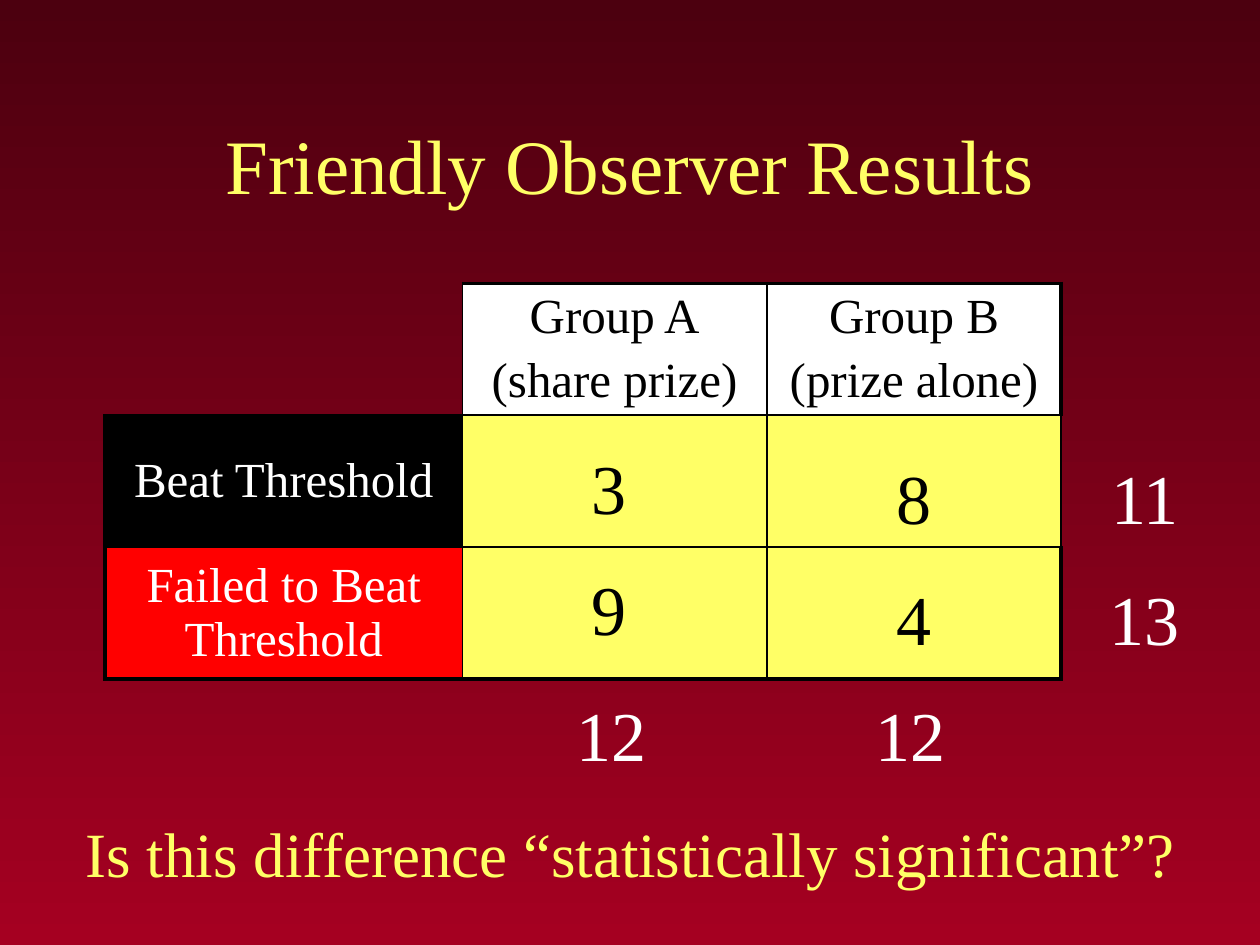
"""Build the slide with the friendly observer results."""
from dataclasses import dataclass

from lxml import etree
from pptx import Presentation, util as u
from pptx.dml.color import RGBColor
from pptx.enum import text as t
from pptx.oxml.ns import qn

FONT = "Times New Roman"
BLACK, WHITE, RED, YELLOW = "000000", "FFFFFF", "FF0000", "FFFF66"
DARK_RED, CRIMSON = "4C000F", "A50021"
NO_STYLE = "{2D5ABB26-0587-4C30-8999-92F81FD0307C}"
THIN, THICK = 1, 2.25


@dataclass
class Cell:
    text: str = ""
    color: str = BLACK
    fill: str | None = None
    anchor: t.MSO_ANCHOR = t.MSO_ANCHOR.MIDDLE


@dataclass
class Grid:
    left: float
    top: float
    columns: list[float]
    row_height: float
    rows: list[list[Cell]]
    size: float = 40


def rgb(value: str) -> RGBColor:
    """Turn a hex string into a colour."""
    return RGBColor.from_string(value)


def write(frame, text: str, size: float, color: str, align=None, space: float = 0) -> None:
    """Fill a text frame, one paragraph a line."""
    frame.text = text
    for paragraph in frame.paragraphs:
        paragraph.alignment = align
        paragraph.space_before = u.Pt(space)
        paragraph.font.name = FONT
        paragraph.font.size = u.Pt(size)
        paragraph.font.color.rgb = rgb(color)


def draw_grid(slide, grid: Grid):
    """Draw a table without style and return it."""
    table = slide.shapes.add_table(
        len(grid.rows), len(grid.columns), u.Cm(grid.left), u.Cm(grid.top),
        u.Cm(sum(grid.columns)), u.Cm(grid.row_height * len(grid.rows))).table
    table.first_row = table.horz_banding = False
    table._tbl.tblPr.find(qn("a:tableStyleId")).text = NO_STYLE
    for column, width in zip(table.columns, grid.columns):
        column.width = u.Cm(width)
    for row, cells in zip(table.rows, grid.rows):
        row.height = u.Cm(grid.row_height)
        for cell, content in zip(row.cells, cells):
            cell.vertical_anchor = content.anchor
            if content.fill:
                cell.fill.solid()
                cell.fill.fore_color.rgb = rgb(content.fill)
            else:
                cell.fill.background()
            if content.text:
                write(cell.text_frame, content.text, grid.size, content.color,
                      t.PP_ALIGN.CENTER, grid.size * 0.2)
    return table


def set_borders(cell, widths: dict[str, float]) -> None:
    """Give a cell black borders, with widths in points by side."""
    properties = cell._tc.get_or_add_tcPr()
    for index, (side, width) in enumerate(widths.items()):
        line = etree.Element(qn(f"a:ln{side}"), w=str(u.Pt(width)))
        fill = etree.SubElement(line, qn("a:solidFill"))
        etree.SubElement(fill, qn("a:srgbClr"), val=BLACK)
        properties.insert(index, line)


def frame_results(table) -> None:
    """Rule the results table, thick at its outer edge."""
    last_row, last_column = len(table.rows) - 1, len(table.columns) - 1
    for row in range(last_row + 1):
        for column in range(last_column + 1):
            widths = {
                "L": THICK if column == 0 else THIN,
                "R": THICK if column == last_column and row != 1 else THIN,
                "T": THICK if row == 0 else THIN,
                "B": THICK if row == last_row else THIN,
            }
            if row == column == 0:
                widths = {"R": THIN, "B": THIN}
            set_borders(table.cell(row, column), widths)


def counts(left: float, top: float, values: list[str], color: str) -> Grid:
    """Describe a column of counts."""
    return Grid(left, top, [3.81], 2.43, [[Cell(value, color)] for value in values])


def main() -> None:
    """Build and save the slide."""
    presentation = Presentation()
    presentation.slide_width, presentation.slide_height = u.Cm(25.4), u.Cm(19.05)
    slide = presentation.slides.add_slide(presentation.slide_layouts[5])

    background = slide.background.fill
    background.gradient()
    background.gradient_angle = 270
    for stop, color in zip(background.gradient_stops, (DARK_RED, CRIMSON)):
        stop.color.rgb = rgb(color)

    title = slide.shapes.title
    title.left, title.top, title.width, title.height = map(u.Cm, (1.9, 1.7, 21.6, 3.18))
    title.text_frame.vertical_anchor = t.MSO_ANCHOR.MIDDLE
    write(title.text_frame, "Friendly Observer Results", 44, YELLOW, t.PP_ALIGN.CENTER)

    top = t.MSO_ANCHOR.TOP
    results = Grid(2.12, 5.71, [7.2, 6.14, 5.93], 2.66, [
        [Cell(), Cell("Group A\n(share prize)", BLACK, WHITE, top),
         Cell("Group B\n(prize alone)", BLACK, WHITE, top)],
        [Cell("Beat Threshold", WHITE, BLACK), Cell(fill=YELLOW), Cell(fill=YELLOW)],
        [Cell("Failed to Beat Threshold", WHITE, RED), Cell(fill=YELLOW), Cell(fill=YELLOW)],
    ], 28)
    frame_results(draw_grid(slide, results))

    group_totals = Grid(9.31, 13.97, [6.03, 6.03], 2.12, [[Cell("12", WHITE, anchor=top)] * 2])
    for grid in (group_totals,
                 counts(21.17, 8.89, ["11", "13"], WHITE),
                 counts(10.37, 8.68, ["3", "9"], BLACK),
                 counts(16.51, 8.89, ["8", "4"], BLACK)):
        draw_grid(slide, grid)

    question = slide.shapes.add_textbox(*map(u.Cm, (1.48, 16.3, 23.07, 1.77))).text_frame
    question.word_wrap = True
    question.auto_size = t.MSO_AUTO_SIZE.SHAPE_TO_FIT_TEXT
    write(question, "Is this difference “statistically significant”?", 36, YELLOW, space=18)

    presentation.save("out.pptx")


if __name__ == "__main__":
    main()
